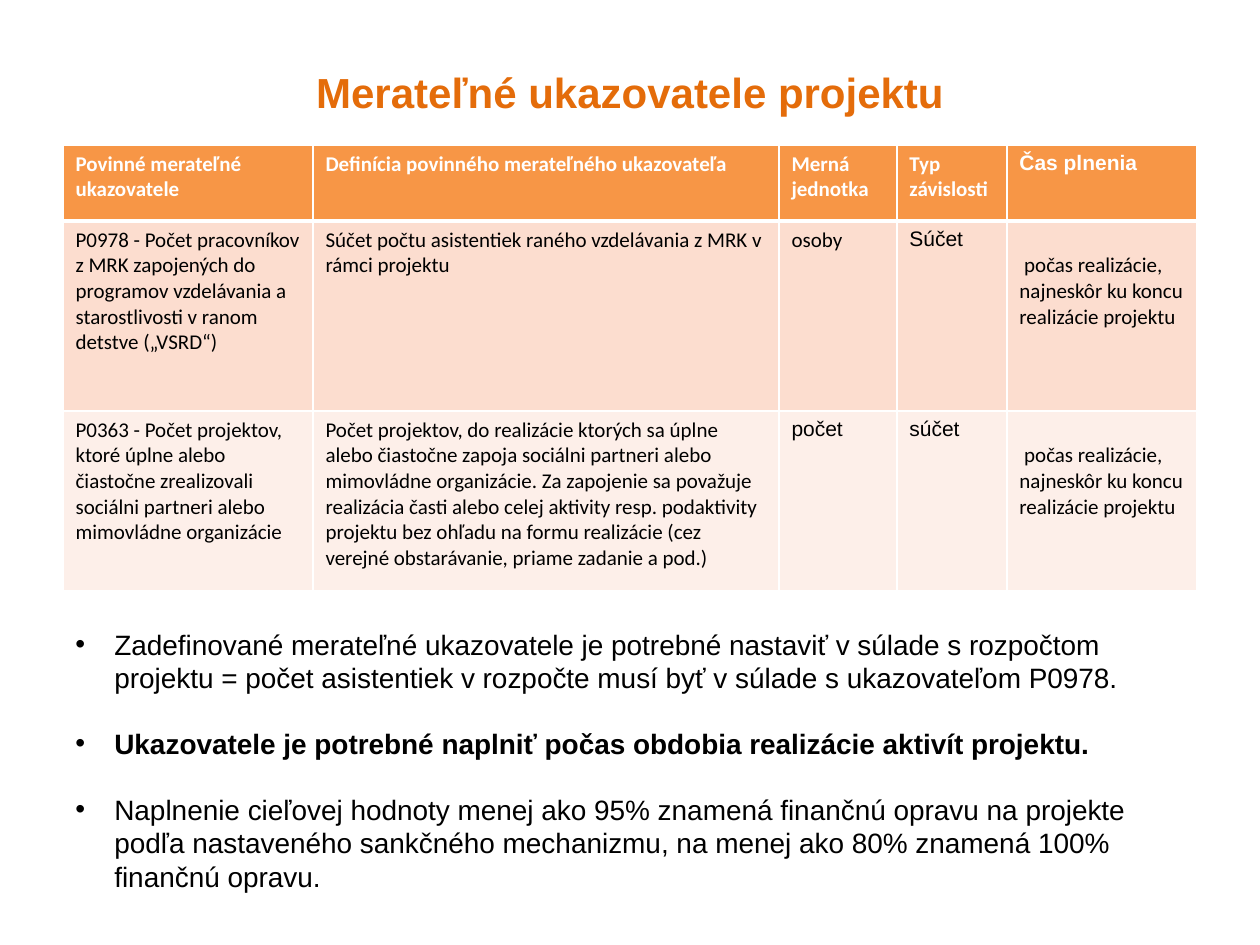
from lxml.etree import SubElement
from pptx import Presentation
from pptx.dml.color import RGBColor
from pptx.enum.text import MSO_ANCHOR as Anchor, PP_ALIGN as Align
from pptx.oxml.ns import qn
from pptx.util import Emu, Pt

EMU_PER_PX = 914400 / 126

HEADINGS = [
    ("Povinné merateľné ukazovatele", "Calibri"),
    ("Definícia povinného merateľného ukazovateľa", "Calibri"),
    ("Merná jednotka", "Calibri"),
    ("Typ závislosti", "Calibri"),
    ("Čas plnenia", "Arial"),
]
DEADLINE = (" počas realizácie, najneskôr ku koncu realizácie projektu", "Calibri")
STAFF_INDICATOR = [
    ("P0978 - Počet pracovníkov z MRK zapojených do programov vzdelávania "
     "a starostlivosti v ranom detstve („VSRD“)", "Calibri"),
    ("Súčet počtu asistentiek raného vzdelávania z MRK v rámci projektu", "Calibri"),
    ("osoby", "Calibri"),
    ("Súčet", "Arial"),
    DEADLINE,
]
PROJECT_INDICATOR = [
    ("P0363 - Počet projektov, ktoré úplne alebo čiastočne zrealizovali "
     "sociálni partneri alebo mimovládne organizácie", "Calibri"),
    ("Počet projektov, do realizácie ktorých sa úplne alebo čiastočne zapoja "
     "sociálni partneri alebo mimovládne organizácie. Za zapojenie sa považuje "
     "realizácia časti alebo celej aktivity resp. podaktivity projektu bez ohľadu "
     "na formu realizácie (cez verejné obstarávanie, priame zadanie a pod.)", "Calibri"),
    ("počet", "Arial"),
    ("súčet", "Arial"),
    DEADLINE,
]
INDICATOR_ROWS = [
    (76, "F79646", HEADINGS),
    (190, "FCDDCF", STAFF_INDICATOR),
    (180, "FDEFE9", PROJECT_INDICATOR),
]
COLUMN_WIDTHS = [250, 466, 118, 110, 190]
RULES = [
    ("Zadefinované merateľné ukazovatele je potrebné nastaviť v súlade s rozpočtom "
     "projektu = počet asistentiek v rozpočte musí byť v súlade s ukazovateľom P0978.", False),
    ("Ukazovatele je potrebné naplniť počas obdobia realizácie aktivít projektu.", True),
    ("Naplnenie cieľovej hodnoty menej ako 95% znamená finančnú opravu na projekte "
     "podľa nastaveného sankčného mechanizmu, na menej ako 80% znamená 100% "
     "finančnú opravu.", False),
]


def px(length):
    return Emu(round(length * EMU_PER_PX))


def color(code):
    return RGBColor.from_string(code)


def write(paragraph, text, size=12, font="Calibri", fill="000000", bold=False,
          align=Align.LEFT, before=0):
    paragraph.alignment = align
    paragraph.space_before = Pt(before)
    run = paragraph.add_run()
    run.text = text
    run.font.size = Pt(size)
    run.font.name = font
    run.font.bold = bold
    run.font.color.rgb = color(fill)


def add_bullet(paragraph, indent):
    properties = paragraph._p.get_or_add_pPr()
    properties.set("marL", str(px(indent)))
    properties.set("indent", str(-px(indent)))
    SubElement(properties, qn("a:buFont"), typeface="Arial")
    SubElement(properties, qn("a:buChar"), char="•")


def add_frame(slide, left, top, width, height, anchor=Anchor.TOP):
    frame = slide.shapes.add_textbox(px(left), px(top), px(width), px(height)).text_frame
    frame.word_wrap = True
    frame.vertical_anchor = anchor
    return frame


def set_borders(cell, **widths):
    properties = cell._tc.get_or_add_tcPr()
    for side in "LRTB":
        line = SubElement(properties, qn(f"a:ln{side}"), w=str(Pt(widths.get(side, 1))))
        SubElement(SubElement(line, qn("a:solidFill")), qn("a:srgbClr"), val="FFFFFF")


def add_title(slide):
    frame = add_frame(slide, 63, 57, 1134, 69, Anchor.MIDDLE)
    write(frame.paragraphs[0], "Merateľné ukazovatele projektu", size=24, font="Arial",
          fill="E46C0A", bold=True, align=Align.CENTER)


def add_indicator_table(slide):
    height = sum(row_height for row_height, _, _ in INDICATOR_ROWS)
    table = slide.shapes.add_table(len(INDICATOR_ROWS), len(COLUMN_WIDTHS), px(63), px(145),
                                   px(sum(COLUMN_WIDTHS)), px(height)).table
    table.horz_banding = False
    for column, width in zip(table.columns, COLUMN_WIDTHS):
        column.width = px(width)
    for row_index, (row_height, background, entries) in enumerate(INDICATOR_ROWS):
        table.rows[row_index].height = px(row_height)
        heading = row_index == 0
        for column_index, entry in enumerate(entries):
            text, font = entry
            cell = table.cell(row_index, column_index)
            set_borders(cell, B=3 if heading else 1, T=3 if row_index == 1 else 1)
            cell.fill.solid()
            cell.fill.fore_color.rgb = color(background)
            if entry == DEADLINE:
                cell.margin_top = px(32)
            write(cell.text_frame.paragraphs[0], text, font=font, bold=heading,
                  fill="FFFFFF" if heading else "000000")


def add_rules(slide):
    frame = add_frame(slide, 63, 621, 1123, 285)
    for index, (text, bold) in enumerate(RULES):
        paragraph = frame.add_paragraph() if index else frame.paragraphs[0]
        write(paragraph, text, size=16, font="Arial", bold=bold,
              before=18.4 if index else 0)
        add_bullet(paragraph, 39)


def main():
    presentation = Presentation()
    presentation.slide_width = px(1260)
    presentation.slide_height = px(945)
    slide = presentation.slides.add_slide(presentation.slide_layouts[6])
    add_title(slide)
    add_indicator_table(slide)
    add_rules(slide)
    presentation.save("out.pptx")


if __name__ == "__main__":
    main()
